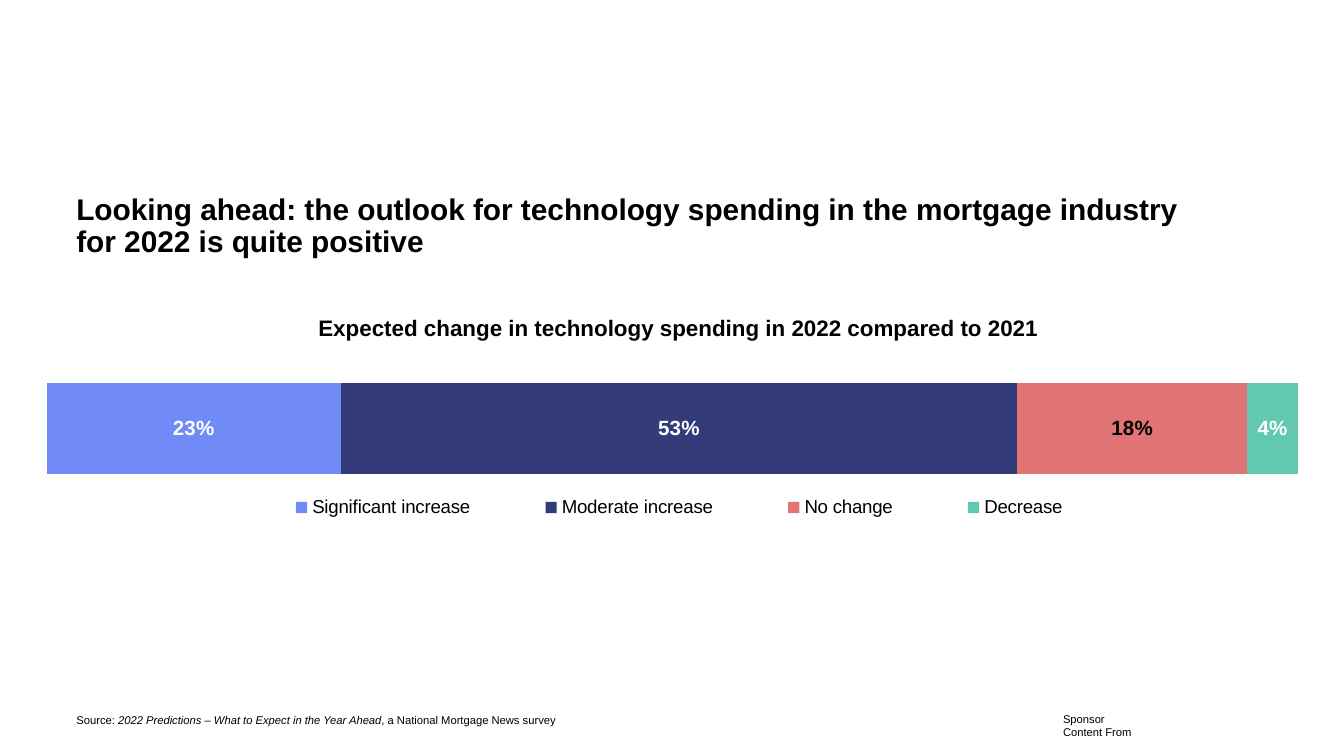
import pptx
import pptx.chart.data
import pptx.dml.color
import pptx.enum.chart
import pptx.enum.text
import pptx.oxml
import pptx.oxml.ns
import pptx.util

Inches = pptx.util.Inches
Pt = pptx.util.Pt
RGBColor = pptx.dml.color.RGBColor
qn = pptx.oxml.ns.qn

FONT = "Arial"
BLACK = RGBColor(0x00, 0x00, 0x00)
WHITE = RGBColor(0xFF, 0xFF, 0xFF)
BLUE = RGBColor(0x70, 0x8A, 0xF7)
NAVY = RGBColor(0x33, 0x3B, 0x78)
RED = RGBColor(0xE1, 0x74, 0x74)
GREEN = RGBColor(0x63, 0xC8, 0xB2)

OUTLOOK = [
    ("Significant increase", 0.23, BLUE, WHITE),
    ("Moderate increase", 0.53, NAVY, WHITE),
    ("No change", 0.18, RED, BLACK),
    ("Decrease", 0.04, GREEN, WHITE),
]


def style_font(font, size, color=BLACK, bold=False, italic=False):
    font.name = FONT
    font.size = Pt(size)
    font.color.rgb = color
    font.bold = bold
    font.italic = italic


def add_text(s, box, lines, size, bold=False, wrap=True, inset=True, grow=True, spacing=None):
    tf = s.shapes.add_textbox(*map(Inches, box)).text_frame
    tf.word_wrap = wrap
    if grow:
        tf.auto_size = pptx.enum.text.MSO_AUTO_SIZE.SHAPE_TO_FIT_TEXT
    if not inset:
        tf.margin_left = tf.margin_right = tf.margin_top = tf.margin_bottom = 0
    p = tf.paragraphs[0]
    if spacing:
        p.line_spacing = spacing
    for i, runs in enumerate(lines):
        if i:
            p.add_line_break()
        for text, italic in runs:
            r = p.add_run()
            r.text = text
            style_font(r.font, size, bold=bold, italic=italic)


def make_layout(x, y, w, h, target=""):
    return pptx.oxml.parse_xml(
        f'<c:layout {pptx.oxml.ns.nsdecls("c")}><c:manualLayout>{target}'
        '<c:xMode val="edge"/><c:yMode val="edge"/>'
        f'<c:x val="{x}"/><c:y val="{y}"/><c:w val="{w}"/><c:h val="{h}"/>'
        '</c:manualLayout></c:layout>')


def place_chart_parts(chart):
    plot_area = chart.element.find(".//" + qn("c:plotArea"))
    legend = chart.element.find(".//" + qn("c:legend"))
    for part in (plot_area, legend):
        for old in part.findall(qn("c:layout")):
            part.remove(old)
    plot_area.insert(0, make_layout(0.043, 0.05, 0.954, 0.824,
                                    '<c:layoutTarget val="inner"/>'))
    legend.find(qn("c:legendPos")).addnext(make_layout(0.18, 0.69, 0.69, 0.12))


def add_outlook_chart(s, box):
    data = pptx.chart.data.CategoryChartData(number_format="0%")
    data.categories = ["1"]
    for name, share, _, _ in OUTLOOK:
        data.add_series(name, [share])
    chart = s.shapes.add_chart(
        pptx.enum.chart.XL_CHART_TYPE.BAR_STACKED_100, *map(Inches, box), data).chart
    chart.has_title = False
    style_font(chart.font, 10)

    for axis in (chart.category_axis, chart.value_axis):
        axis.has_major_gridlines = False
        axis.visible = False
    chart.value_axis.minimum_scale = 0
    chart.value_axis.maximum_scale = 1

    plot = chart.plots[0]
    plot.gap_width = 150
    plot.overlap = 100
    plot.vary_by_categories = False
    for series, (_, _, fill, label) in zip(plot.series, OUTLOOK):
        series.format.fill.solid()
        series.format.fill.fore_color.rgb = fill
        labels = series.data_labels
        labels.show_value = True
        labels.number_format = "0%"
        labels.number_format_is_linked = False
        labels.position = pptx.enum.chart.XL_LABEL_POSITION.CENTER
        style_font(labels.font, 11, label, bold=True)

    chart.has_legend = True
    chart.legend.position = pptx.enum.chart.XL_LEGEND_POSITION.BOTTOM
    chart.legend.include_in_layout = False
    style_font(chart.legend.font, 10)
    place_chart_parts(chart)


def add_outlook(s, left, top):
    add_outlook_chart(s, (left, top, 9.76, 2.05))
    add_text(s, (left + 2.34, top + 0.05, 5.62, 0.3),
             [[("Expected change in technology spending in 2022 compared to 2021", False)]],
             12, bold=True, wrap=False)


def add_footer(s, left, top):
    add_text(s, (left + 7.44, top + 0.04, 1.17, 0.2),
             [[("Sponsor ", False)], [("Content From", False)]], 6, inset=False)
    add_text(s, (left, top, 3.82, 0.2),
             [[("Source: ", False),
               ("2022 Predictions – What to Expect in the Year Ahead", True),
               (", a National Mortgage News survey", False)]], 6, wrap=False)


def main():
    prs = pptx.Presentation()
    prs.slide_width = Inches(10)
    prs.slide_height = Inches(10 * 9 / 16)
    s = prs.slides.add_slide(prs.slide_layouts[6])
    add_footer(s, 0.47, 5.26)
    add_text(s, (0.47, 1.4, 8.54, 0.82),
             [[("Looking ahead: the outlook for technology spending in the mortgage "
                "industry for 2022 is quite positive", False)]],
             16, bold=True, grow=False, spacing=0.9)
    add_outlook(s, -0.07, 2.24)
    prs.save("out.pptx")


if __name__ == "__main__":
    main()
